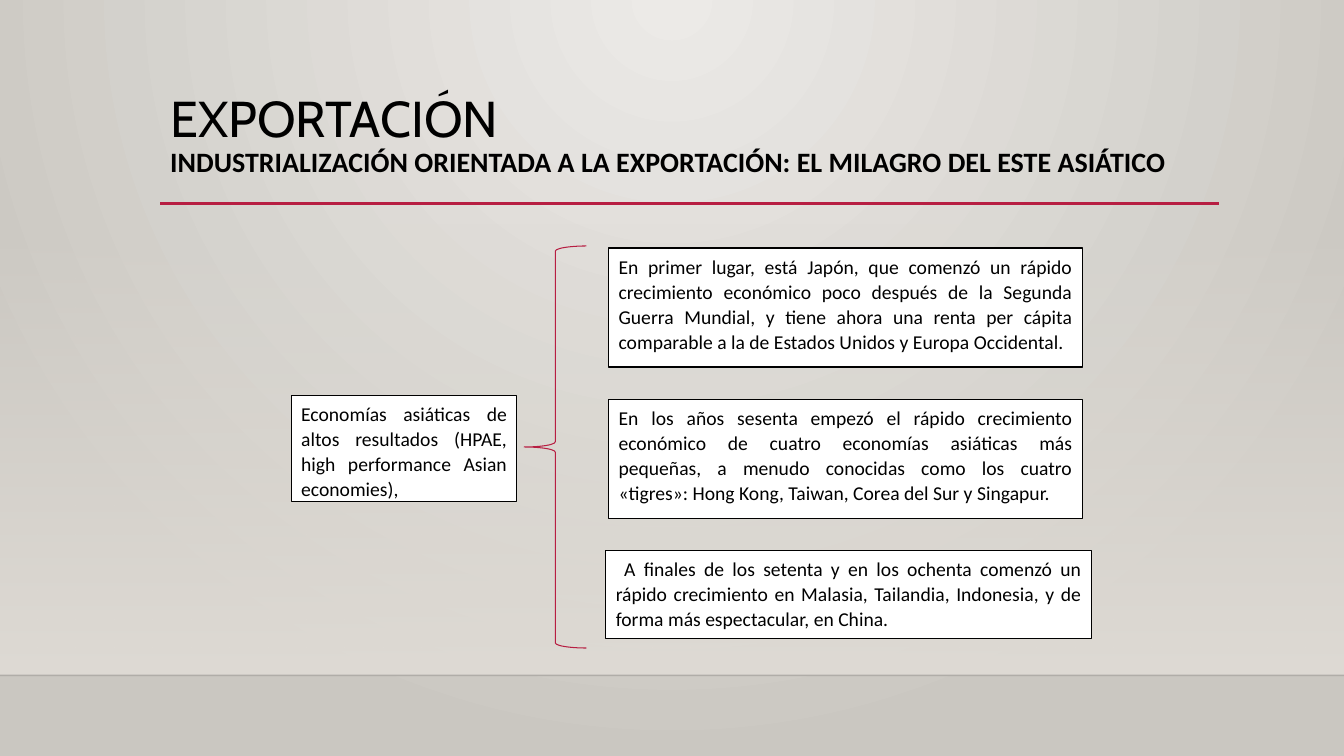
from dataclasses import dataclass

from lxml import etree
from pptx import Presentation
from pptx.dml.color import RGBColor
from pptx.enum.shapes import MSO_CONNECTOR, MSO_SHAPE
from pptx.enum.text import MSO_ANCHOR, PP_ALIGN
from pptx.oxml.ns import qn
from pptx.util import Cm, Pt

RECTANGLE = MSO_SHAPE.RECTANGLE
LEFT_BRACE = MSO_SHAPE.LEFT_BRACE
STRAIGHT = MSO_CONNECTOR.STRAIGHT
TOP = MSO_ANCHOR.TOP
LEFT = PP_ALIGN.LEFT
JUSTIFY = PP_ALIGN.JUSTIFY

SLIDE_WIDTH, SLIDE_HEIGHT = 33.87, 19.05
FLOOR_TOP = 17.02


@dataclass(frozen=True)
class Theme:
    ink: str = "000000"
    paper: str = "FFFFFF"
    accent: str = "B71E42"
    glow: str = "ECEAE7"
    edge: str = "CAC7C1"
    wall: str = "DFDBD5"
    heading_font: str = "Cabin"
    body_font: str = "Calibri"
    heading_size: int = 36
    subtitle_size: int = 20
    body_size: int = 14
    thin: float = 0.75
    floor_line: float = 1
    rule: float = 2.5


def set_alpha(color_parent, percent):
    color = color_parent.find(".//" + qn("a:srgbClr"))
    etree.SubElement(color, qn("a:alpha")).set("val", str(percent * 1000))


class SlideBuilder:
    def __init__(self, slide, theme):
        self.slide = slide
        self.theme = theme

    def radial_background(self):
        """Fill the background with light spreading from the top centre."""
        fill = self.slide.background.fill
        fill.gradient()
        for stop, color in zip(fill.gradient_stops, (self.theme.glow, self.theme.edge)):
            stop.color.rgb = RGBColor.from_string(color)
        gradient = self.slide.element.find(".//" + qn("a:gradFill"))
        gradient.remove(gradient.find(qn("a:lin")))
        circle = etree.SubElement(gradient, qn("a:path"), path="circle")
        etree.SubElement(circle, qn("a:fillToRect"), l="43000", t="0", r="43000", b="100000")

    def shape(self, kind, left, top, width, height):
        shape = self.slide.shapes.add_shape(kind, Cm(left), Cm(top), Cm(width), Cm(height))
        shape.shadow.inherit = False
        return shape

    def fading_wall(self, left, top, width, height):
        """Add a panel that goes from clear at the top to solid at the bottom."""
        wall = self.shape(RECTANGLE, left, top, width, height)
        wall.line.fill.background()
        wall.fill.gradient()
        wall.fill.gradient_angle = 270
        for stop in wall.fill.gradient_stops:
            stop.color.rgb = RGBColor.from_string(self.theme.wall)
        set_alpha(wall.element.find(".//" + qn("a:gs")), 0)

    def horizontal_line(self, left, right, y, color, weight, alpha=100):
        connector = self.slide.shapes.add_connector(STRAIGHT, Cm(left), Cm(y), Cm(right), Cm(y))
        self.outline(connector, color, weight)
        properties = connector.element.spPr
        if alpha < 100:
            set_alpha(properties, alpha)
        etree.SubElement(properties, qn("a:effectLst"))

    def outline(self, element, color, weight):
        element.line.color.rgb = RGBColor.from_string(color)
        element.line.width = Pt(weight)

    def paragraph(self, frame, alignment, spacing):
        frame.word_wrap = True
        frame.vertical_anchor = TOP
        paragraph = frame.paragraphs[0]
        paragraph.alignment = alignment
        paragraph.line_spacing = spacing
        return paragraph

    def run(self, paragraph, text, font, size, bold=False):
        run = paragraph.add_run()
        run.text = text
        run.font.name = font
        run.font.size = Pt(size)
        run.font.bold = bold
        run.font.color.rgb = RGBColor.from_string(self.theme.ink)

    def title(self, heading, subtitle, left, top, width, height):
        box = self.slide.shapes.add_textbox(Cm(left), Cm(top), Cm(width), Cm(height))
        paragraph = self.paragraph(box.text_frame, LEFT, 0.9)
        self.run(paragraph, heading, self.theme.heading_font, self.theme.heading_size)
        paragraph.add_line_break()
        self.run(paragraph, subtitle, self.theme.body_font, self.theme.subtitle_size, True)

    def text_card(self, text, left, top, width, height):
        card = self.shape(RECTANGLE, left, top, width, height)
        card.fill.solid()
        card.fill.fore_color.rgb = RGBColor.from_string(self.theme.paper)
        self.outline(card, self.theme.ink, self.theme.thin)
        paragraph = self.paragraph(card.text_frame, JUSTIFY, 1.07)
        paragraph.space_after = Pt(8)
        self.run(paragraph, text, self.theme.body_font, self.theme.body_size)

    def brace(self, left, top, width, height):
        brace = self.shape(LEFT_BRACE, left, top, width, height)
        brace.fill.background()
        self.outline(brace, self.theme.accent, self.theme.thin)


def main():
    presentation = Presentation()
    presentation.slide_width = Cm(SLIDE_WIDTH)
    presentation.slide_height = Cm(SLIDE_HEIGHT)
    theme = Theme()
    page = SlideBuilder(presentation.slides.add_slide(presentation.slide_layouts[6]), theme)

    page.radial_background()
    wall_top = 5.61
    page.fading_wall(0, wall_top, SLIDE_WIDTH, FLOOR_TOP - wall_top)
    page.horizontal_line(0, SLIDE_WIDTH, FLOOR_TOP, theme.ink, theme.floor_line, alpha=20)
    page.horizontal_line(4.04, 30.73, 5.13, theme.accent, theme.rule)
    page.title(
        "EXPORTACIÓN",
        "INDUSTRIALIZACIÓN ORIENTADA A LA EXPORTACIÓN: EL MILAGRO DEL ESTE ASIÁTICO",
        4.04, 2.24, 26.67, 2.92,
    )

    page.text_card(
        "Economías asiáticas de altos resultados (HPAE, high performance Asian economies),",
        7.34, 9.96, 5.69, 2.69,
    )
    page.brace(13.21, 6.2, 1.57, 10.13)

    growth_waves = [
        ("En primer lugar, está Japón, que comenzó un rápido crecimiento económico poco "
         "después de la Segunda Guerra Mundial, y tiene ahora una renta per cápita "
         "comparable a la de Estados Unidos y Europa Occidental.", 15.34, 11.94, 3),
        ("En los años sesenta empezó el rápido crecimiento económico de cuatro economías "
         "asiáticas más pequeñas, a menudo conocidas como los cuatro «tigres»: Hong Kong, "
         "Taiwan, Corea del Sur y Singapur.", 15.34, 11.94, 3),
        (" A finales de los setenta y en los ochenta comenzó un rápido crecimiento en "
         "Malasia, Tailandia, Indonesia, y de forma más espectacular, en China.",
         15.27, 12.24, 2.21),
    ]
    first_top, pitch = 6.25, 3.81
    for index, (text, left, width, height) in enumerate(growth_waves):
        page.text_card(text, left, first_top + index * pitch, width, height)

    presentation.save("out.pptx")


if __name__ == "__main__":
    main()
